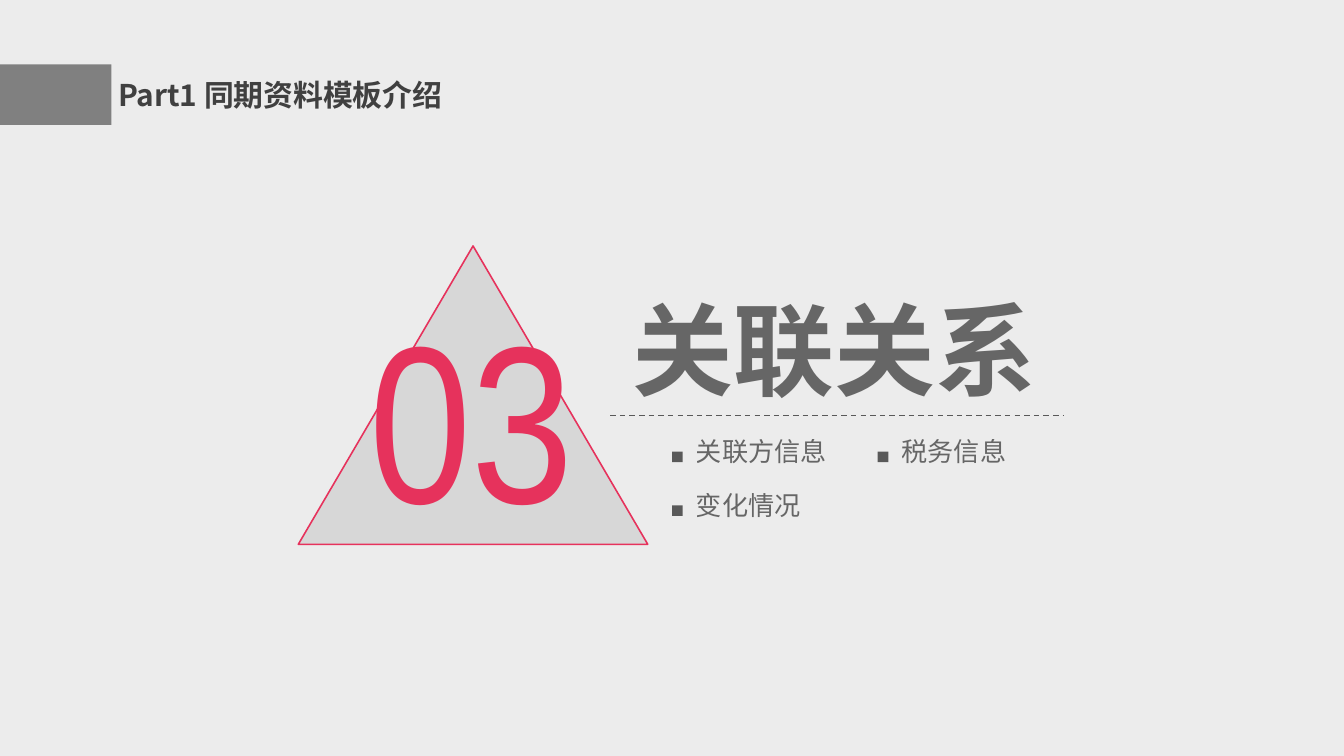
from lxml.etree import SubElement
from pptx import Presentation
from pptx.dml.color import RGBColor
from pptx.enum.dml import MSO_LINE
from pptx.enum.shapes import MSO_CONNECTOR, MSO_SHAPE
from pptx.enum.text import MSO_ANCHOR, MSO_AUTO_SIZE
from pptx.oxml.ns import qn
from pptx.util import Inches, Pt

BACK = RGBColor(0xEC, 0xEC, 0xEC)
GRAY = RGBColor(0x59, 0x59, 0x59)
BAND = RGBColor(0x80, 0x80, 0x80)
DARK = RGBColor(0x40, 0x40, 0x40)
PINK = RGBColor(0xE6, 0x32, 0x5C)
SANS = "Noto Sans CJK SC"
TOPICS = ["关联方信息", "税务信息", "变化情况"]


def fade(props, percent):
    """Set the opacity of the solid fill held by props."""
    color = props.find(qn("a:solidFill"))[0]
    SubElement(color, qn("a:alpha"), val=str(percent * 1000))


def add_shape(slide, kind, box, color):
    shape = slide.shapes.add_shape(kind, *map(Inches, box))
    shape.shadow.inherit = False
    shape.fill.solid()
    shape.fill.fore_color.rgb = color
    shape.line.fill.background()
    return shape


def add_text(slide, text, box, size, color, face=SANS, bold=False, alpha=100):
    label = slide.shapes.add_textbox(*map(Inches, box))
    frame = label.text_frame
    frame.text = text
    frame.word_wrap = False
    frame.auto_size = MSO_AUTO_SIZE.SHAPE_TO_FIT_TEXT
    run = frame.paragraphs[0].runs[0]
    font = run.font
    font.size = Pt(size)
    font.bold = bold
    font.color.rgb = color
    font.name = face
    props = run._r.get_or_add_rPr()
    SubElement(props, qn("a:ea"), typeface=face)
    if alpha < 100:
        fade(props, alpha)
    return frame


def add_header(slide):
    add_shape(slide, MSO_SHAPE.RECTANGLE, (0, 0.48, 0.83, 0.45), BAND)
    frame = add_text(slide, "Part1 同期资料模板介绍", (0.78, 0.47, 3.28, 0.47),
                     16, DARK, bold=True)
    frame.word_wrap = True
    frame.auto_size = MSO_AUTO_SIZE.NONE
    frame.vertical_anchor = MSO_ANCHOR.MIDDLE


def add_badge(slide):
    shape = add_shape(slide, MSO_SHAPE.ISOSCELES_TRIANGLE,
                      (2.22, 1.83, 2.6, 2.22), GRAY)
    fade(shape._element.spPr, 14)
    shape.line.color.rgb = PINK
    shape.line.width = Pt(0.85)
    add_text(slide, "03", (2.65, 2.03, 2, 2.12), 120, PINK, "Arial Narrow")


def add_rule(slide, left, right, top):
    rule = slide.shapes.add_connector(
        MSO_CONNECTOR.STRAIGHT, *map(Inches, (left, top, right, top)))
    rule.line.color.rgb = GRAY
    rule.line.width = Pt(0.75)
    rule.line.dash_style = MSO_LINE.DASH
    SubElement(rule._element.spPr, qn("a:effectLst"))


def add_topic(slide, text, left, top):
    """Add a square marker with its label."""
    add_shape(slide, MSO_SHAPE.RECTANGLE,
              (left, top + 0.17, 0.08, 0.08), GRAY)
    width = 0.2 + 0.2 * len(text)
    add_text(slide, text, (left + 0.08, top, width, 0.34), 14, GRAY, alpha=91)


def main():
    deck = Presentation()
    deck.slide_width = Inches(10)
    deck.slide_height = deck.slide_width * 9 // 16
    slide = deck.slides.add_slide(deck.slide_layouts[6])
    slide.background.fill.solid()
    slide.background.fill.fore_color.rgb = BACK

    add_header(slide)
    add_badge(slide)
    add_text(slide, "关联关系", (4.61, 2.09, 3.23, 1.01), 54, GRAY,
             bold=True, alpha=91)
    add_rule(slide, 4.54, 7.91, 3.09)
    for i, text in enumerate(TOPICS):
        row, col = divmod(i, 2)
        add_topic(slide, text, 5 + 1.53 * col, 3.19 + 0.4 * row)
    deck.save("out.pptx")


if __name__ == "__main__":
    main()
